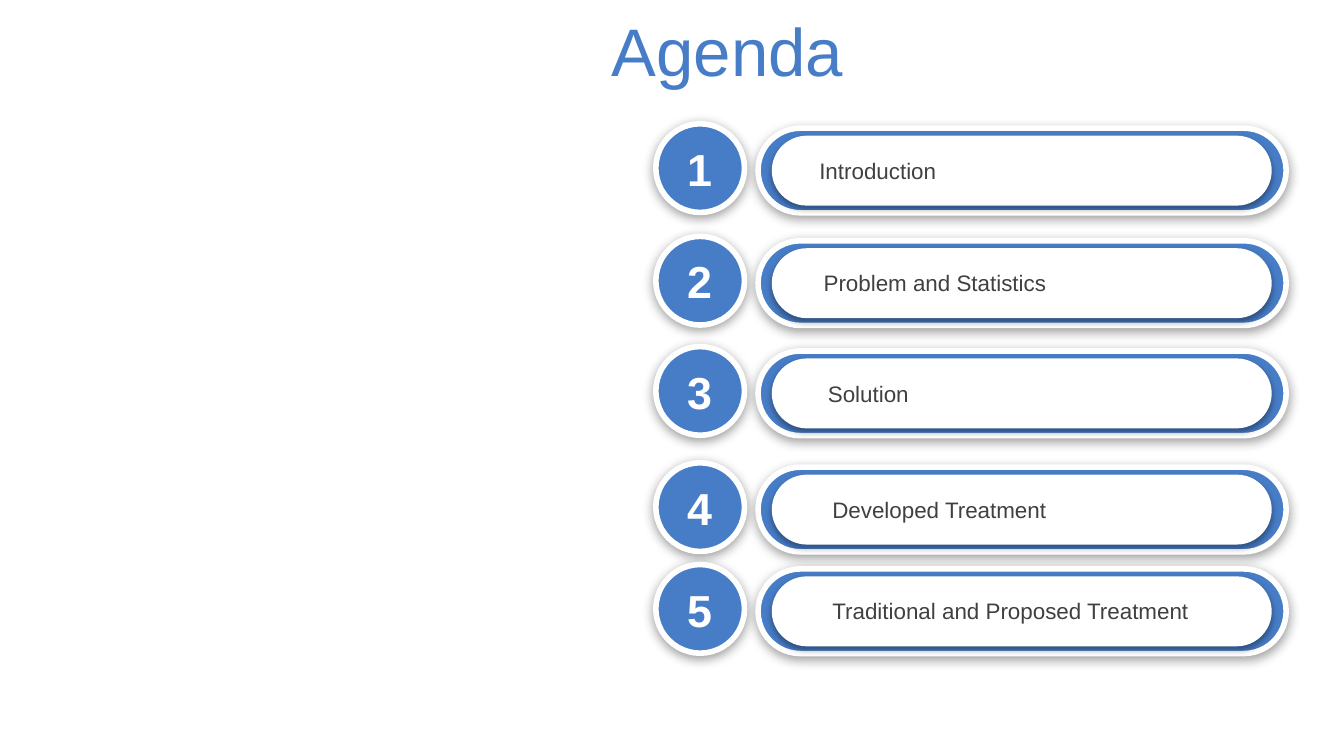
import pptx
import pptx.util
import pptx.dml.color
import pptx.enum.shapes
import pptx.enum.text
import pptx.oxml
import pptx.oxml.ns

BLUE = pptx.dml.color.RGBColor(0x47, 0x7D, 0xC7)
WHITE = pptx.dml.color.RGBColor(0xFF, 0xFF, 0xFF)
GRAY = pptx.dml.color.RGBColor(0x40, 0x40, 0x40)
FONT = "Arial"
SLIDE_WIDTH = pptx.util.Inches(10)
SLIDE_HEIGHT = SLIDE_WIDTH * 9 // 16
SHAPES = pptx.enum.shapes.MSO_SHAPE
ALIGN = pptx.enum.text.PP_ALIGN
ANCHOR = pptx.enum.text.MSO_ANCHOR
AUTO_SIZE = pptx.enum.text.MSO_AUTO_SIZE

AGENDA = [
    ("Introduction", 16.38, 59.98),
    ("Problem and Statistics", 31.27, 60.3),
    ("Solution", 45.85, 60.62),
    ("Developed Treatment", 61.22, 60.95),
    ("Traditional and Proposed Treatment", 74.68, 60.95),
]


def area(left, top, width, height):
    """Turn percentages of the slide's size into lengths."""
    return (int(SLIDE_WIDTH * left / 100), int(SLIDE_HEIGHT * top / 100),
            int(SLIDE_WIDTH * width / 100), int(SLIDE_HEIGHT * height / 100))


def write_text(shape, text, size=12, color=GRAY, bold=False, align=ALIGN.LEFT,
               anchor=ANCHOR.TOP, wrap=True, auto_size=AUTO_SIZE.NONE):
    """Fill a shape with one formatted paragraph."""
    frame = shape.text_frame
    frame.word_wrap = wrap
    frame.auto_size = auto_size
    frame.vertical_anchor = anchor
    paragraph = frame.paragraphs[0]
    paragraph.alignment = align
    run = paragraph.add_run()
    run.text = text
    run.font.name = FONT
    run.font.size = pptx.util.Pt(size)
    run.font.bold = bold
    run.font.color.rgb = color


def add_shadow(shape, opacity, blur, distance):
    """Cast a soft black shadow straight down."""
    shape.shadow.inherit = False
    effects = shape._element.spPr.find(pptx.oxml.ns.qn("a:effectLst"))
    effects.append(pptx.oxml.parse_xml(
        f'<a:outerShdw {pptx.oxml.ns.nsdecls("a")} blurRad="{pptx.util.Pt(blur)}" '
        f'dist="{pptx.util.Pt(distance)}" dir="5400000" algn="t" rotWithShape="0">'
        f'<a:srgbClr val="000000"><a:alpha val="{opacity * 1000}"/></a:srgbClr>'
        '</a:outerShdw>'))


def add_panel(group, kind, box, fill, outlined):
    """Add a filled shape, either white-rimmed or without an outline."""
    shape = group.shapes.add_shape(kind, *area(*box))
    shape.fill.solid()
    shape.fill.fore_color.rgb = fill
    if kind == SHAPES.ROUNDED_RECTANGLE:
        shape.adjustments[0] = 0.5
    if outlined:
        shape.line.color.rgb = WHITE
        shape.line.width = pptx.util.Pt(3)
        add_shadow(shape, 38, 6, 1.6)
    else:
        shape.line.fill.background()
        add_shadow(shape, 35, 3.1, 1.8)


def add_label(group, box, text, **text_format):
    """Add a text box that grows with its text."""
    label = group.shapes.add_textbox(*area(*box))
    write_text(label, text, auto_size=AUTO_SIZE.SHAPE_TO_FIT_TEXT, **text_format)


def add_agenda_item(slide, number, topic, top, label_left):
    """Add a numbered disc with its topic bar as one group."""
    group = slide.shapes.add_group_shape()
    add_panel(group, SHAPES.ROUNDED_RECTANGLE, (56.4, top + 0.58, 39.3, 11.2), BLUE, True)
    add_panel(group, SHAPES.ROUNDED_RECTANGLE, (57.42, top + 1.57, 37.2, 9.25), WHITE, False)
    add_label(group, (label_left, top + 3.5, 30, 5.4), topic, wrap=False)
    add_panel(group, SHAPES.OVAL, (48.8, top, 6.6, 11.73), BLUE, True)
    add_label(group, (49.8, top + 1.45, 4.5, 8.9), str(number), size=24, color=WHITE,
              bold=True, align=ALIGN.CENTER, anchor=ANCHOR.MIDDLE)


def add_title(slide, text):
    """Place and format the slide's title."""
    title = slide.shapes.title
    title.left, title.top, title.width, title.height = area(44.5, 1, 55.5, 11.2)
    write_text(title, text, size=36, color=BLUE, anchor=ANCHOR.MIDDLE)


def main():
    """Build the agenda slide."""
    presentation = pptx.Presentation()
    presentation.slide_width = SLIDE_WIDTH
    presentation.slide_height = SLIDE_HEIGHT
    slide = presentation.slides.add_slide(presentation.slide_layouts[5])
    add_title(slide, "Agenda")
    for number, (topic, top, label_left) in enumerate(AGENDA, start=1):
        add_agenda_item(slide, number, topic, top, label_left)
    presentation.save("out.pptx")


if __name__ == "__main__":
    main()
